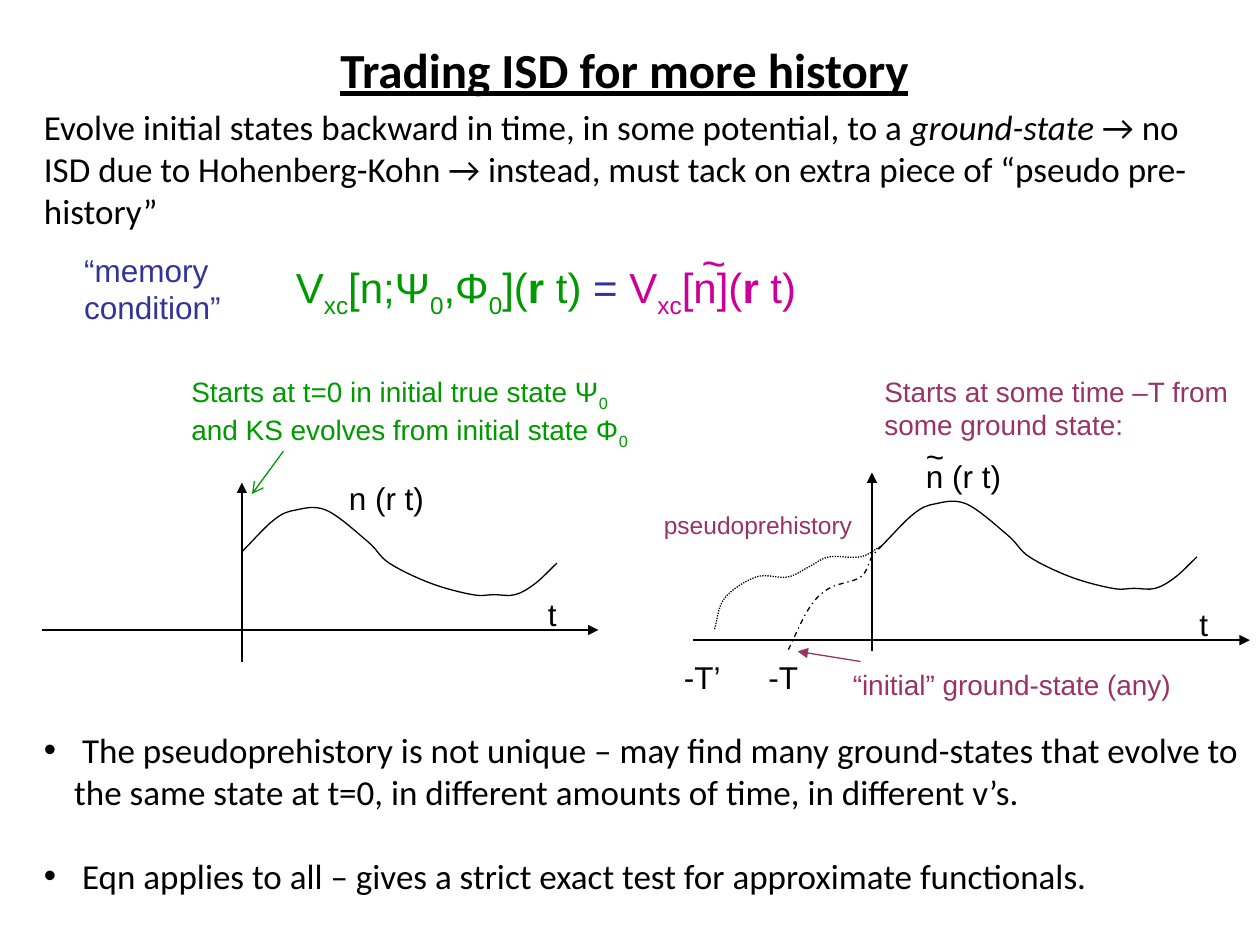
"""Builds the slide on trading initial-state dependence for more history."""
import pptx
import pptx.dml.color
import pptx.enum.dml
import pptx.enum.shapes
import pptx.enum.text
import pptx.oxml.ns
import pptx.util
from lxml import etree

PX = 9144
HUES = {"ink": "000000", "green": "009900", "blue": "333399",
        "pink": "CC0099", "plum": "993366"}
DASH = pptx.enum.dml.MSO_LINE
WAVE = [(0, 0), (25, -25), (42, -33), (67, -33), (100, -8), (117, 9), (150, 25),
        (183, 34), (200, 34), (217, 34), (233, 25), (250, 9)]
DOTS = [(700, 433), (683, 442), (658, 442), (642, 450), (625, 458),
        (600, 458), (575, 475), (567, 500)]
DASHES = [(700, 433), (692, 442), (683, 458), (658, 467), (642, 483), (625, 517)]


def spline(knots):
    """Return the start, then two controls and an end for each smooth piece."""
    ends = [tuple(2 * a - b for a, b in zip(knots[i], knots[j]))
            for i, j in ((0, 1), (-1, -2))]
    full = [ends[0], *knots, ends[1]]
    points = [knots[0]]
    for a, b, c, d in zip(full, full[1:], full[2:], full[3:]):
        points += [tuple(q + (r - p) / 6 for p, q, r in zip(a, b, c)),
                   tuple(r - (s - q) / 6 for q, r, s in zip(b, c, d)), c]
    return points


class Board:
    """Holds the style and the current slide."""

    def __init__(self, deck):
        """Add a title-only slide."""
        self.slide = deck.slides.add_slide(deck.slide_layouts[5])
        self.shapes = self.slide.shapes

    def rgb(self, hue):
        """Return a named colour."""
        return pptx.dml.color.RGBColor.from_string(HUES[hue])

    def fill(self, para, runs, size, hue, face):
        """Add runs of (text, marks, hue) to a paragraph."""
        for item in [runs] if isinstance(runs, str) else runs:
            words, marks, tint = (item, "", hue) if isinstance(item, str) else (*item, hue)[:3]
            run = para.add_run()
            run.text = words
            font = run.font
            font.name, font.size = face, pptx.util.Pt(size)
            font.color.rgb = self.rgb(tint)
            font.bold, font.italic, font.underline = ("b" in marks, "i" in marks, "u" in marks)
            if "_" in marks:
                run._r.get_or_add_rPr().set("baseline", "-25000")

    def title(self, box, runs):
        """Place and format the title."""
        shape = self.shapes.title
        shape.left, shape.top, shape.width, shape.height = (n * PX for n in box)
        frame = shape.text_frame
        frame.vertical_anchor = pptx.enum.text.MSO_ANCHOR.MIDDLE
        para = frame.paragraphs[0]
        para.alignment = pptx.enum.text.PP_ALIGN.CENTER
        self.fill(para, runs, 28, "ink", "Calibri")

    def text(self, box, runs, size=18, hue="ink", face="Arial", wrap=True):
        """Add a text box of one paragraph and return its frame."""
        frame = self.shapes.add_textbox(*(n * PX for n in box)).text_frame
        frame.word_wrap = wrap
        frame.auto_size = pptx.enum.text.MSO_AUTO_SIZE.SHAPE_TO_FIT_TEXT
        self.fill(frame.paragraphs[0], runs, size, hue, face)
        return frame

    def bullets(self, box, items, gap):
        """Add a bulleted list."""
        frame = self.text(box, items[0], 20, face="Calibri")
        for item in items[1:]:
            para = frame.add_paragraph()
            para.space_before = pptx.util.Pt(gap)
            self.fill(para, item, 20, "ink", "Calibri")
        for para in frame.paragraphs:
            props = para._p.get_or_add_pPr()
            props.set("marL", str(24 * PX))
            props.set("indent", str(-24 * PX))
            for tag, key, value in (("a:buFont", "typeface", "Arial"), ("a:buChar", "char", "•")):
                etree.SubElement(props, pptx.oxml.ns.qn(tag)).set(key, value)

    def arrow(self, start, end, hue="ink", head="triangle"):
        """Draw an arrow from start to end."""
        line = self.shapes.add_connector(
            pptx.enum.shapes.MSO_CONNECTOR.STRAIGHT, *(n * PX for n in (*start, *end)))
        line.line.width = pptx.util.Pt(0.75)
        line.line.color.rgb = self.rgb(hue)
        tip = etree.SubElement(line.line._get_or_add_ln(), pptx.oxml.ns.qn("a:tailEnd"))
        tip.set("type", head)
        etree.SubElement(line._element.spPr, pptx.oxml.ns.qn("a:effectLst"))

    def curve(self, knots, dash=None):
        """Draw an open smooth curve."""
        points = [(round(x * PX), round(y * PX)) for x, y in spline(knots)]
        pen = self.shapes.build_freeform(*points[0])
        pen.add_line_segments(points[1:], close=False)
        shape = pen.convert_to_shape()
        legs = list(shape._element.iter(pptx.oxml.ns.qn("a:lnTo")))
        route = legs[0].getparent()
        for n in range(0, len(legs), 3):
            bend = etree.SubElement(route, pptx.oxml.ns.qn("a:cubicBezTo"))
            for leg in legs[n:n + 3]:
                bend.append(leg[0])
                route.remove(leg)
        shape.shadow.inherit = False
        shape.fill.background()
        shape.line.width = pptx.util.Pt(0.75)
        shape.line.color.rgb = self.rgb("ink")
        if dash:
            shape.line.dash_style = dash

    def wave(self, x, y):
        """Draw the density curve from its value at t=0."""
        self.curve([(x + a, y + b) for a, b in WAVE])


def main():
    """Build and save the slide."""
    deck = pptx.Presentation()
    deck.slide_width, deck.slide_height = 1000 * PX, 750 * PX
    board = Board(deck)
    board.title((50, 17, 900, 75), [("Trading ISD for more history", "bu"), " "])
    board.text((25, 79, 958, 111), [
        "Evolve initial states backward in time, in some potential, to a ",
        ("ground-state ", "i"),
        "→ no ISD due to Hohenberg-Kohn → instead, must tack on extra piece of "
        "“pseudo pre-history”"], 20, face="Calibri")
    board.arrow((692, 517), (692, 375))
    board.arrow((550, 508), (992, 508))

    board.text((225, 203, 650, 51), [
        "V", ("xc", "_"), "[n;Ψ", ("0", "_"), ",Φ", ("0", "_"), "](", ("r", "b"), " t)",
        (" = ", "", "blue"), ("V", "", "pink"), ("xc", "_", "pink"),
        ("[n](", "", "pink"), ("r", "b", "pink"), (" t)", "", "pink")], 24, "green")
    board.text((547, 183, 42, 50), "~", 24, "pink")

    board.wave(700, 433)
    board.text((725, 358, 117, 40), "n (r t)")
    board.curve(DOTS, DASH.ROUND_DOT)
    board.curve(DASHES, DASH.DASH_DOT)
    board.text((942, 475, 33, 40), "t")
    board.text((600, 517, 58, 40), "-T")
    board.text((533, 517, 50, 40), "-T’")

    board.arrow((192, 525), (192, 383))
    board.arrow((33, 500), (475, 500))
    board.wave(192, 438)
    board.text((425, 467, 58, 40), "t")
    board.text((267, 375, 80, 40), "n (r t)", wrap=False)
    board.arrow((225, 358), (200, 392), "green", "arrow")
    board.text((142, 292, 375, 64), [
        "Starts at t=0 in initial true state Ψ", ("0 ", "_"),
        "and KS evolves from initial state Φ", ("0", "_")], 16, "green")

    board.text((725, 342, 42, 40), "~")
    board.text((692, 292, 308, 64), "Starts at some time –T from some ground state:", 16, "plum")
    board.text((667, 525, 283, 37), "“initial” ground-state (any)", 16, "plum")
    board.arrow((683, 525), (633, 517), "plum")
    board.text((517, 400, 175, 33), "pseudoprehistory", 14, "plum")

    board.bullets((25, 573, 975, 145), [
        " The pseudoprehistory is not unique – may find many ground-states that evolve to "
        "the same state at t=0, in different amounts of time, in different v’s.",
        " Eqn applies to all – gives a strict exact test for approximate functionals."], 24)
    board.text((57, 194, 167, 70), "“memory condition”", hue="blue")
    deck.save("out.pptx")


if __name__ == "__main__":
    main()
